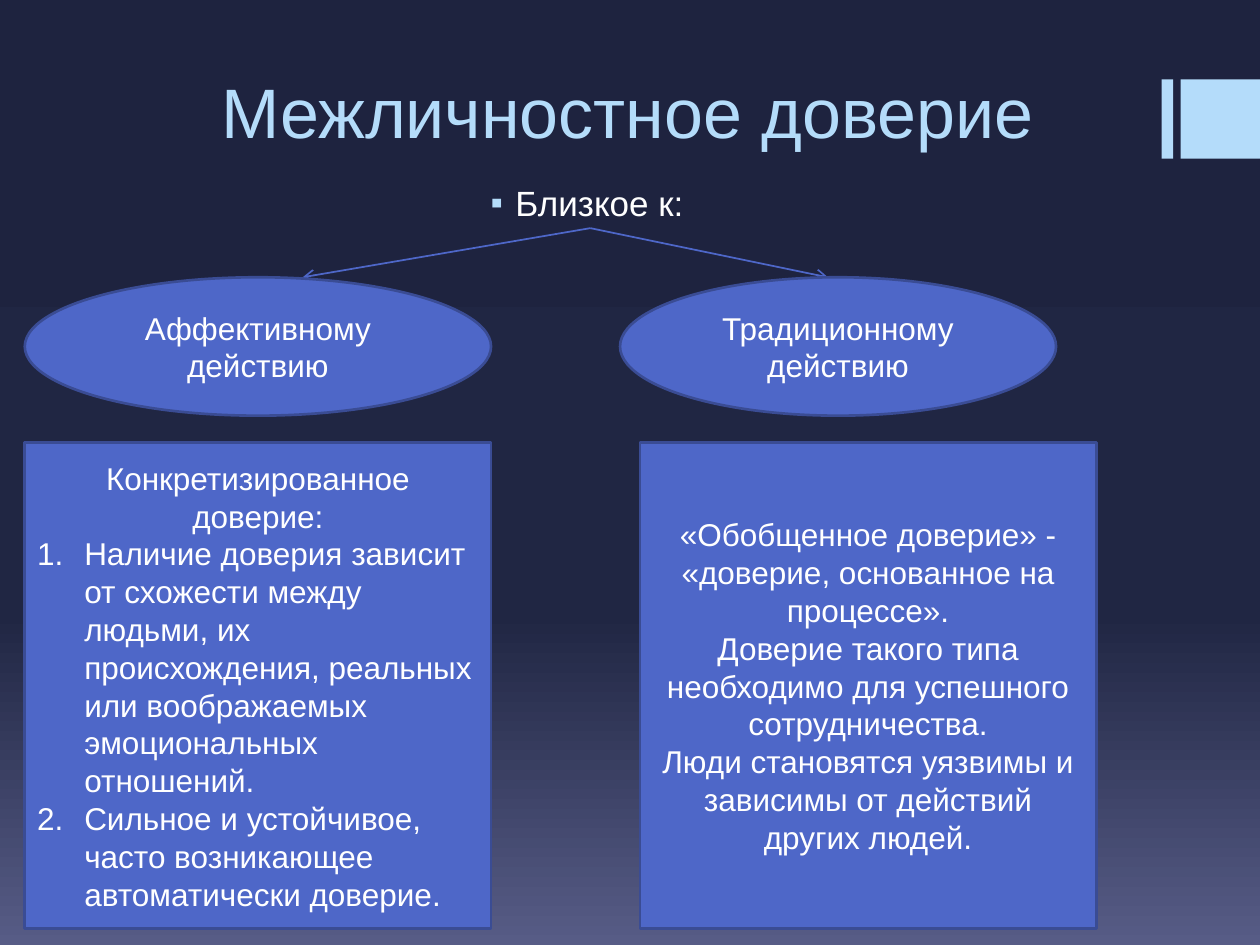
from copy import deepcopy

from lxml import etree
from pptx import Presentation
from pptx import util as u
from pptx.dml.color import RGBColor
from pptx.enum import shapes, text
from pptx.oxml.ns import qn

Cm, Pt = u.Cm, u.Pt
SHAPE, ALIGN, ANCHOR = shapes.MSO_SHAPE, text.PP_ALIGN, text.MSO_ANCHOR

SKY = RGBColor(0xB4, 0xDC, 0xFA)
BLUE = RGBColor(0x4E, 0x67, 0xC8)
EDGE = RGBColor(0x3A, 0x4C, 0x94)
WHITE = RGBColor(0xFF, 0xFF, 0xFF)
BACKDROP = [
    (0, RGBColor(0x1E, 0x23, 0x3F)),
    (0.65, RGBColor(0x20, 0x26, 0x43)),
    (1, RGBColor(0x57, 0x5C, 0x86)),
]


class SlideBuilder:
    font = "Arial"

    def __init__(self, slide):
        self.s = slide

    def background(self, stops):
        """Fill the slide with a gradient running from top to bottom."""
        fill = self.s.background.fill
        fill.gradient()
        fill.gradient_angle = 270
        stop_list = self.s.element.find(".//" + qn("a:gsLst"))
        while len(stop_list) < len(stops):
            stop_list.append(deepcopy(stop_list[0]))
        for stop, (position, color) in zip(fill.gradient_stops, stops):
            stop.position = position
            stop.color.rgb = color

    def set_text(self, tf, lines, size, color):
        tf.word_wrap = True
        tf.text = "\n".join(lines)
        for p in tf.paragraphs:
            p.alignment = ALIGN.CENTER
            for r in p.runs:
                r.font.name = self.font
                r.font.size = Pt(size)
                r.font.color.rgb = color

    def mark(self, p, indent, hanging, tag, color=None, **attributes):
        """Give a left-aligned paragraph a bullet or a number."""
        p.alignment = ALIGN.LEFT
        pPr = p._p.get_or_add_pPr()
        pPr.set("marL", str(Cm(indent)))
        pPr.set("indent", str(-Cm(hanging)))
        if color is not None:
            bullet_color = etree.SubElement(pPr, qn("a:buClr"))
            etree.SubElement(bullet_color, qn("a:srgbClr"), val=str(color))
        etree.SubElement(pPr, qn("a:buFont"), typeface=self.font)
        etree.SubElement(pPr, qn(tag), **attributes)

    def textbox(self, x, y, w, h, lines, size, color, anchor=ANCHOR.TOP):
        tf = self.s.shapes.add_textbox(Cm(x), Cm(y), Cm(w), Cm(h)).text_frame
        self.set_text(tf, lines, size, color)
        tf.vertical_anchor = anchor
        return tf

    def shape(self, kind, x, y, w, h, fill, edge=None):
        sp = self.s.shapes.add_shape(kind, Cm(x), Cm(y), Cm(w), Cm(h))
        sp.shadow.inherit = False
        sp.fill.solid()
        sp.fill.fore_color.rgb = fill
        if edge is None:
            sp.line.fill.background()
        else:
            sp.line.color.rgb = edge
            sp.line.width = Pt(1.5)
        return sp

    def panel(self, kind, x, y, w, h, lines):
        tf = self.shape(kind, x, y, w, h, BLUE, EDGE).text_frame
        self.set_text(tf, lines, 18, WHITE)
        tf.vertical_anchor = ANCHOR.MIDDLE
        return tf

    def arrow(self, x1, y1, x2, y2):
        line = self.s.shapes.add_connector(
            shapes.MSO_CONNECTOR.STRAIGHT, Cm(x1), Cm(y1), Cm(x2), Cm(y2))
        line.line.color.rgb = BLUE
        line.line.width = Pt(1)
        spPr = line._element.spPr
        etree.SubElement(spPr.find(qn("a:ln")), qn("a:tailEnd"), type="arrow")
        etree.SubElement(spPr, qn("a:effectLst"))


def main():
    prs = Presentation()
    prs.slide_width, prs.slide_height = Cm(25.4), Cm(19.05)
    b = SlideBuilder(prs.slides.add_slide(prs.slide_layouts[6]))
    b.background(BACKDROP)

    for x, width in ((23.42, 0.23), (23.8, 1.6)):
        b.shape(SHAPE.RECTANGLE, x, 1.6, width, 1.6, SKY)

    b.textbox(2.49, 0, 20.32, 3.2, ["Межличностное доверие"], 40, SKY, ANCHOR.BOTTOM)
    intro = b.textbox(9.5, 3.53, 8.2, 6.2, ["Близкое к:"], 20, WHITE)
    intro.paragraphs[0].space_before = Pt(4)
    b.mark(intro.paragraphs[0], 0.64, 0.5, "a:buChar", SKY, char="▪")

    ellipse_top, ellipse_height = 5.59, 2.79
    box_top, box_height = 8.92, 9.8
    for tip_x in (6.1, 16.69):
        b.arrow(11.9, 4.6, tip_x, ellipse_top)
    for x, width, label in ((0.5, 9.4, "Аффективному действию"),
                            (12.5, 8.79, "Традиционному действию")):
        b.panel(SHAPE.OVAL, x, ellipse_top, width, ellipse_height, [label])

    concrete = b.panel(SHAPE.RECTANGLE, 0.5, box_top, 9.4, box_height, [
        "Конкретизированное доверие:",
        "Наличие доверия зависит от схожести между людьми, их происхождения, "
        "реальных или воображаемых эмоциональных отношений.",
        "Сильное и устойчивое, часто возникающее автоматически доверие.",
    ])
    for p in concrete.paragraphs[1:]:
        b.mark(p, 0.95, 0.95, "a:buAutoNum", type="arabicPeriod")

    b.panel(SHAPE.RECTANGLE, 12.9, box_top, 9.2, box_height, [
        "«Обобщенное доверие» - «доверие, основанное на процессе».",
        "Доверие такого типа необходимо для успешного сотрудничества.",
        "Люди становятся уязвимы и зависимы от действий других людей.",
    ])

    prs.save("out.pptx")


if __name__ == "__main__":
    main()
